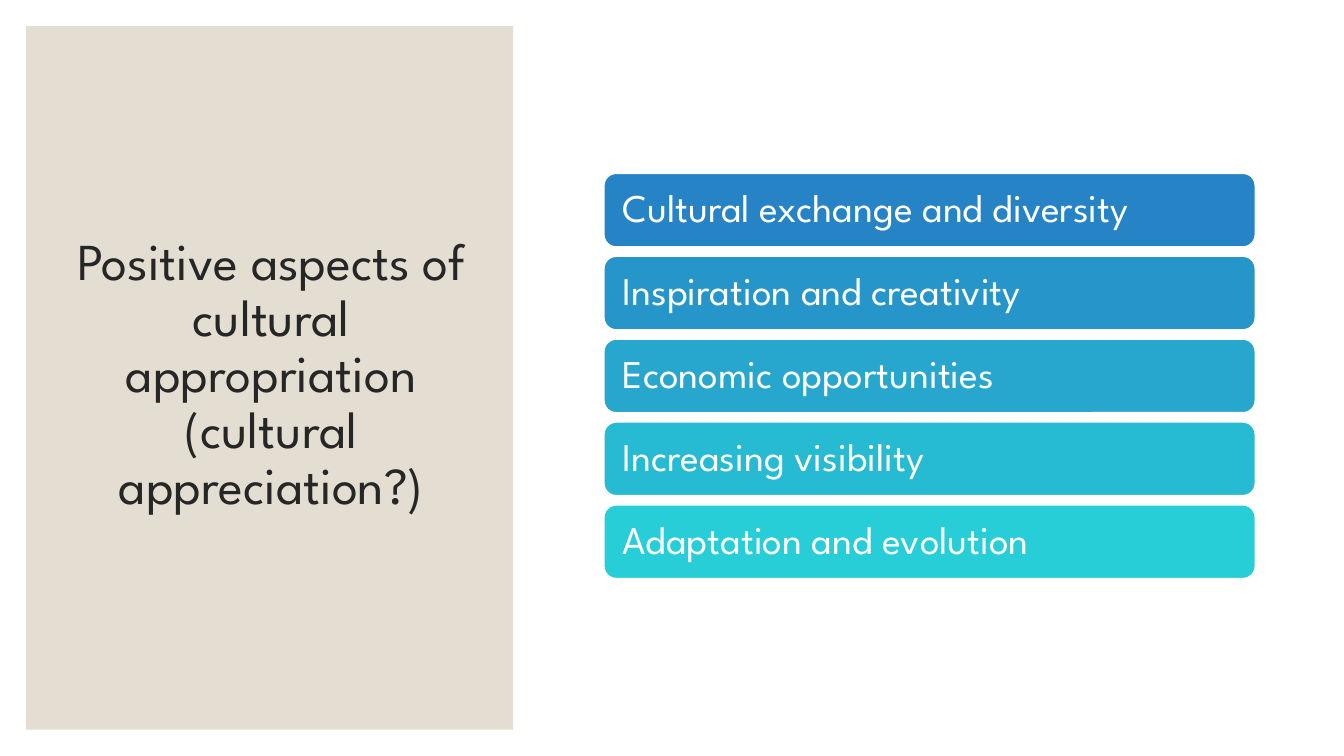
from dataclasses import dataclass

from pptx import Presentation
from pptx.dml.color import RGBColor
from pptx.enum import shapes, text
from pptx.util import Inches, Pt


@dataclass(frozen=True)
class Theme:
    font: str = "League Spartan"
    paper: str = "FFFFFF"
    panel: str = "E3DED1"
    ink: str = "262626"
    bars: tuple = ("2683C6", "2695CA", "27A7CE", "27BAD3", "27CED7")
    head: int = 37
    item: int = 28


THEME = Theme()
TITLE = "Positive aspects of cultural appropriation (cultural appreciation?)"
ASPECTS = (
    "Cultural exchange and diversity",
    "Inspiration and creativity",
    "Economic opportunities",
    "Increasing visibility",
    "Adaptation and evolution",
)


def add_block(slide, kind, box, color):
    block = slide.shapes.add_shape(kind, *map(Inches, box))
    block.shadow.inherit = False
    block.fill.solid()
    block.fill.fore_color.rgb = RGBColor.from_string(color)
    return block


def set_text(shape, words, size, color, align):
    frame = shape.text_frame
    frame.text = words
    frame.word_wrap = True
    frame.auto_size = text.MSO_AUTO_SIZE.NONE
    frame.vertical_anchor = text.MSO_ANCHOR.MIDDLE
    para = frame.paragraphs[0]
    para.alignment = align
    para.line_spacing = 0.9
    para.font.name = THEME.font
    para.font.size = Pt(size)
    para.font.color.rgb = RGBColor.from_string(color)


def add_panel(slide, box):
    left, top, width, height = box
    panel = add_block(slide, shapes.MSO_SHAPE.RECTANGLE, box, THEME.panel)
    panel.line.fill.background()
    title = slide.shapes.title
    title.left, title.top = Inches(left + 0.37), Inches(top + 0.35)
    title.width, title.height = Inches(width - 0.71), Inches(height - 0.74)
    set_text(title, TITLE, THEME.head, THEME.ink, text.PP_ALIGN.CENTER)
    title.element.addprevious(panel.element)


def add_bars(slide, box):
    left, top, width, height = box
    tall = 0.73
    step = (height - tall) / (len(ASPECTS) - 1)
    for row, (words, color) in enumerate(zip(ASPECTS, THEME.bars)):
        place = (left, top + row * step, width, tall)
        bar = add_block(slide, shapes.MSO_SHAPE.ROUNDED_RECTANGLE, place, color)
        bar.line.color.rgb = RGBColor.from_string(THEME.paper)
        bar.line.width = Pt(1)
        bar.text_frame.margin_left = bar.text_frame.margin_right = Inches(0.15)
        set_text(bar, words, THEME.item, THEME.paper, text.PP_ALIGN.LEFT)


def main():
    deck = Presentation()
    deck.slide_width, deck.slide_height = Inches(13.33), Inches(7.5)
    slide = deck.slides.add_slide(deck.slide_layouts.get_by_name("Title Only"))
    slide.background.fill.solid()
    slide.background.fill.fore_color.rgb = RGBColor.from_string(THEME.paper)
    add_panel(slide, (0.26, 0.26, 4.83, 6.98))
    add_bars(slide, (5.99, 1.72, 6.46, 4.02))
    deck.save("out.pptx")


if __name__ == "__main__":
    main()
